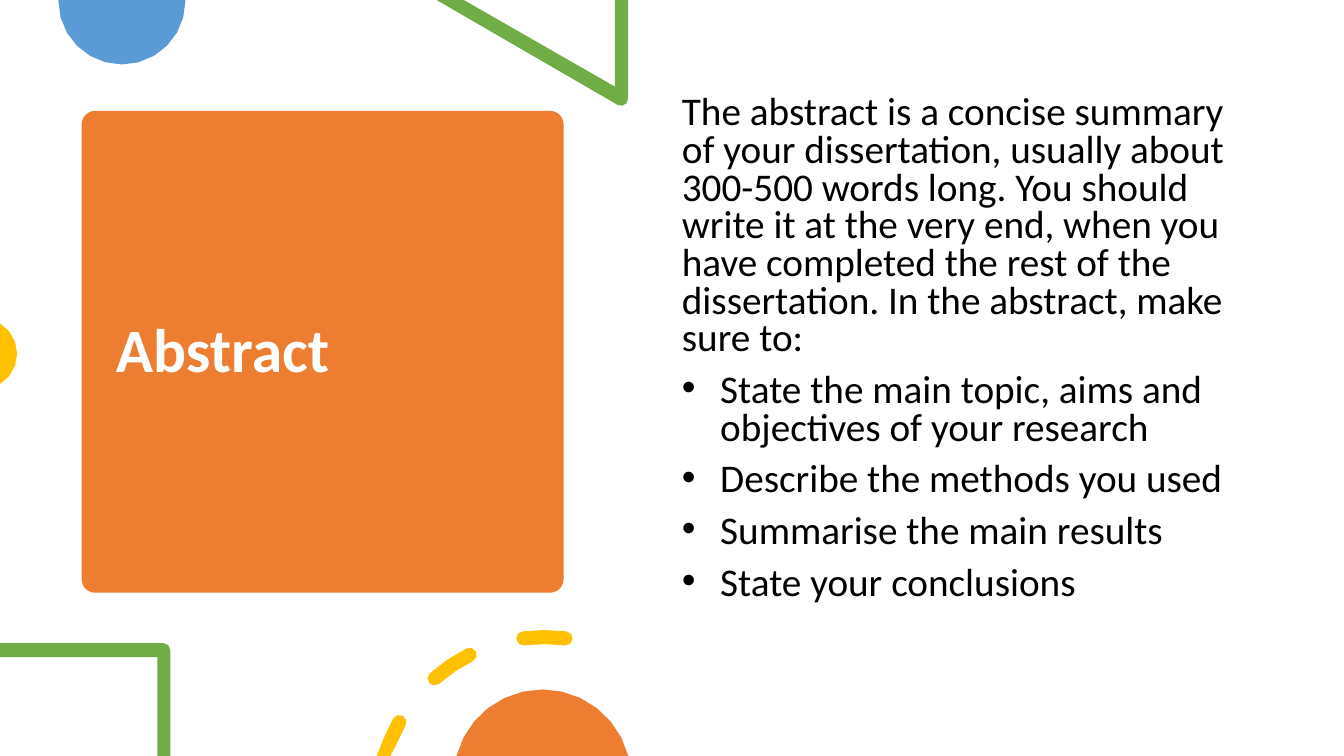
from math import ceil, cos, radians, sin, sqrt
from lxml import etree
from pptx import Presentation
from pptx.dml.color import RGBColor
from pptx.enum.shapes import MSO_SHAPE
from pptx.enum.text import MSO_ANCHOR, MSO_AUTO_SIZE, PP_ALIGN
from pptx.oxml.ns import qn
from pptx.util import Inches, Pt

WHITE = RGBColor(0xFF, 0xFF, 0xFF)
BLACK = RGBColor(0x00, 0x00, 0x00)
ORANGE = RGBColor(0xED, 0x7D, 0x31)
BLUE = RGBColor(0x5B, 0x9B, 0xD5)
GREEN = RGBColor(0x70, 0xAD, 0x47)
YELLOW = RGBColor(0xFF, 0xC0, 0x00)
WIDTH, HEIGHT = 13.33, 7.5

deck = Presentation()
deck.slide_width, deck.slide_height = Inches(WIDTH), Inches(HEIGHT)
slide = deck.slides.add_slide(deck.slide_layouts[5])


def arc(x, y, radius, start, end):
    """Points on a circle, in inches; larger arcs get more points."""
    steps = ceil(abs(radians(end - start)) * sqrt(radius / 0.05))
    angles = [radians(start + (end - start) * i / steps) for i in range(steps + 1)]
    return [(x + radius * cos(a), min(y + radius * sin(a), HEIGHT)) for a in angles]


def draw_outline(color, *contours):
    """One filled shape made of closed contours."""
    contours = [[(Inches(x), Inches(y)) for x, y in points] for points in contours]
    builder = slide.shapes.build_freeform(*contours[0][0], scale=1.0)
    for number, points in enumerate(contours):
        if number:
            builder.move_to(*points[0])
        builder.add_line_segments(points[1:], close=True)
    outline = builder.convert_to_shape()
    outline.shadow.inherit = False
    outline.fill.solid()
    outline.fill.fore_color.rgb = color
    outline.line.fill.background()


# Orange card behind the title
card = slide.shapes.add_shape(MSO_SHAPE.ROUNDED_RECTANGLE, Inches(0.81),
                              Inches(1.1), Inches(4.78), Inches(4.78))
card.adjustments[0] = 0.028
card.shadow.inherit = False
card.fill.solid()
card.fill.fore_color.rgb = ORANGE
card.line.fill.background()

# Title
title = slide.shapes.title
title._element.addprevious(card._element)
title.left, title.top, title.width, title.height = map(Inches, (1.05, 1.22, 4.31, 4.56))
title.text = "Abstract"
title.text_frame.auto_size = MSO_AUTO_SIZE.NONE
title.text_frame.vertical_anchor = MSO_ANCHOR.MIDDLE
heading = title.text_frame.paragraphs[0]
heading.alignment = PP_ALIGN.LEFT
heading.line_spacing = 0.9
for key, value in {"name": "Calibri", "size": Pt(44), "bold": True}.items():
    setattr(heading.font, key, value)
heading.font.color.rgb = WHITE

# Circle cut by the top edge
draw_outline(BLUE, arc(1.21, 0.01, 0.63, 0, 180) + [(0.58, 0), (1.84, 0)])

# Green triangle with one rounded corner
draw_outline(GREEN, [(4.6, 0), (4.33, 0)] + arc(6.16, 0.98, 0.07, 120, 0)
             + [(6.23, 0), (6.1, 0), (6.1, 0.86)])

# Circle cut by the left edge
draw_outline(YELLOW, arc(-0.18, 3.51, 0.35, -59, 59))

# Introduction and bullets
INTRO = ("The abstract is a concise summary of your dissertation, usually about "
         "300-500 words long. You should write it at the very end, when you have "
         "completed the rest of the dissertation. In the abstract, make sure to:")
ADVICE = ["State the main topic, aims and objectives of your research",
          "Describe the methods you used",
          "Summarise the main results",
          "State your conclusions"]
body = slide.shapes.add_textbox(*map(Inches, (WIDTH / 2, 0.9, 5.75, 5.35))).text_frame
body.word_wrap = True
for number, text in enumerate([INTRO] + ADVICE):
    paragraph = body.add_paragraph() if number else body.paragraphs[0]
    paragraph.text = text
    if number:
        layout = paragraph._p.get_or_add_pPr()
        layout.set("marL", str(Inches(0.38)))
        layout.set("indent", str(-Inches(0.38)))
        etree.SubElement(layout, qn("a:buFont")).set("typeface", "Arial")
        etree.SubElement(layout, qn("a:buChar")).set("char", "•")
    paragraph.line_spacing = 0.8
    paragraph.space_before = Pt(10 if number else 0)
    for key, value in {"name": "Calibri", "size": Pt(28)}.items():
        setattr(paragraph.font, key, value)
    paragraph.font.color.rgb = BLACK

# Green frame with one rounded corner
draw_outline(GREEN, [(0, 6.52), (0, 6.38)] + arc(1.62, 6.45, 0.07, 270, 360)
             + [(1.69, HEIGHT), (1.56, HEIGHT), (1.56, 6.52)])

# Dashed ring with round ends, around the orange circle
RING_X, RING_Y, RING_R, HALF = 5.4, 7.97, 1.65, 0.07
DASH, PERIOD = 14.6, 34
dashes = []
for number in range(3):
    start = 194.7 + number * PERIOD
    end = start + DASH
    head, tail = [(RING_X + RING_R * cos(radians(a)), RING_Y + RING_R * sin(radians(a)))
                  for a in (end, start)]
    dashes.append(arc(RING_X, RING_Y, RING_R + HALF, start, end)
                  + arc(*head, HALF, end, end + 180)[1:]
                  + arc(RING_X, RING_Y, RING_R - HALF, end, start)[1:]
                  + arc(*tail, HALF, start + 180, start + 360)[1:-1])
draw_outline(YELLOW, *dashes)
draw_outline(ORANGE, arc(5.38, 7.72, 0.88, 194.5, 345.5))

deck.save("out.pptx")
